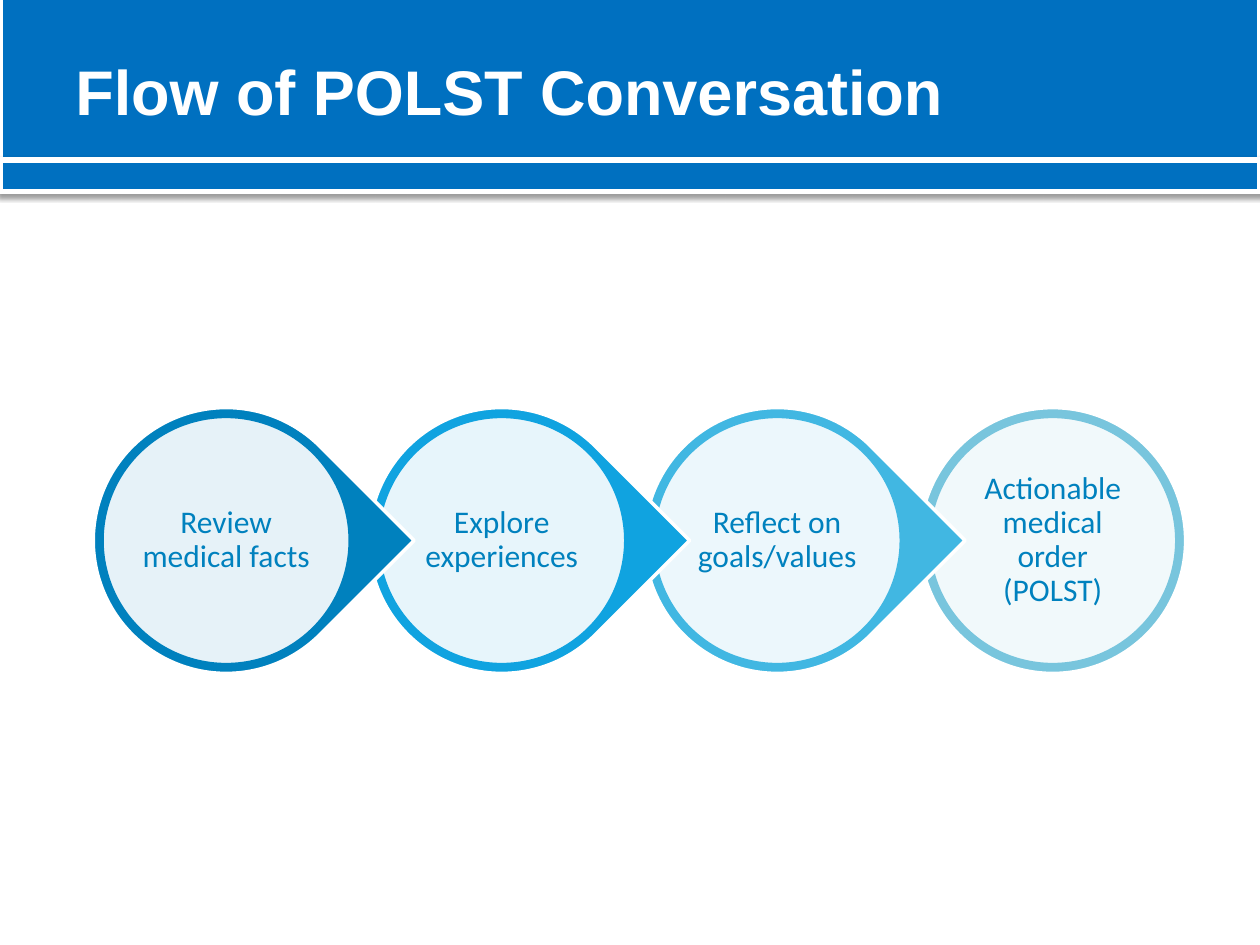
from lxml import etree
from pptx import Presentation, util as u
from pptx.dml.color import RGBColor
from pptx.enum import shapes, text
from pptx.oxml import ns

WHITE = RGBColor(0xFF, 0xFF, 0xFF)
BANNER = RGBColor(0x00, 0x70, 0xC0)
BLUE = RGBColor(0x00, 0x81, 0xBE)
SKY = RGBColor(0x10, 0xA3, 0xE0)
LIGHT = RGBColor(0x41, 0xB7, 0xE2)
PALE = RGBColor(0x78, 0xC5, 0xDD)

prs = Presentation()
prs.slide_width, prs.slide_height = u.Inches(10), u.Inches(7.5)
s = prs.slides.add_slide(prs.slide_layouts[6])


def add_shape(kind, box, fill, line, width):
    sp = s.shapes.add_shape(kind, *map(u.Inches, box))
    sp.shadow.inherit = False
    sp.fill.solid()
    sp.fill.fore_color.rgb = fill
    sp.line.color.rgb = line
    sp.line.width = u.Pt(width)
    return sp


def add_text(box, words, inset, align, spacing, font):
    tf = s.shapes.add_textbox(*map(u.Inches, box)).text_frame
    tf.word_wrap = True
    tf.vertical_anchor = text.MSO_ANCHOR.MIDDLE
    for side in ("left", "top", "right", "bottom"):
        setattr(tf, f"margin_{side}", u.Inches(inset))
    p = tf.paragraphs[0]
    p.alignment, p.line_spacing = align, spacing
    r = p.add_run()
    r.text = words
    r.font.color.rgb = font["color"]
    for name in ("name", "size", "bold"):
        setattr(r.font, name, font[name])


for top, height in ((-0.05, 1.32), (1.27, 0.25)):
    sp = add_shape(shapes.MSO_SHAPE.RECTANGLE, (0, top, 10, height), BANNER, WHITE, 3)
    effects = sp._element.spPr.find(ns.qn("a:effectLst"))
    shadow = etree.SubElement(effects, ns.qn("a:outerShdw"), blurRad=str(u.Pt(3.1)),
                              dist=str(u.Pt(1.6)), dir="5400000", rotWithShape="0")
    color = etree.SubElement(shadow, ns.qn("a:srgbClr"), val="000000")
    etree.SubElement(color, ns.qn("a:alpha"), val="38000")

title_font = {"name": "Arial", "size": u.Pt(36), "bold": True, "color": WHITE}
step_font = {"name": "Calibri", "size": u.Pt(18), "bold": False, "color": BLUE}
add_text((0.5, 0.09, 9, 1.25), "Flow of POLST Conversation", 0.1,
         text.PP_ALIGN.LEFT, 1.0, title_font)

steps = [
    ("Review medical facts", BLUE),
    ("Explore experiences", SKY),
    ("Reflect on goals/values", LIGHT),
    ("Actionable medical order (POLST)", PALE),
]
left, middle, pitch = 0.74, 4.29, 6.56 / 3
outer, inner, label = 2.11, 1.97, 1.41
last = len(steps) - 1

for i, (words, color) in reversed(list(enumerate(steps))):
    center = left + i * pitch + outer / 2
    drop, disc, words_box = [(center - d / 2, middle - d / 2, d, d)
                             for d in (outer, inner, label)]
    kind = shapes.MSO_SHAPE.OVAL if i == last else shapes.MSO_SHAPE.TEAR
    sp = add_shape(kind, drop, color, WHITE, 2)
    sp.rotation = 0 if i == last else 45
    sp = add_shape(shapes.MSO_SHAPE.OVAL, disc, WHITE, color, 2)
    tint = sp._element.spPr.find(ns.qn("a:solidFill"))[0]
    etree.SubElement(tint, ns.qn("a:alpha"), val="90000")
    add_text(words_box, words, 0.03, text.PP_ALIGN.CENTER, 0.9, step_font)

prs.save("out.pptx")
